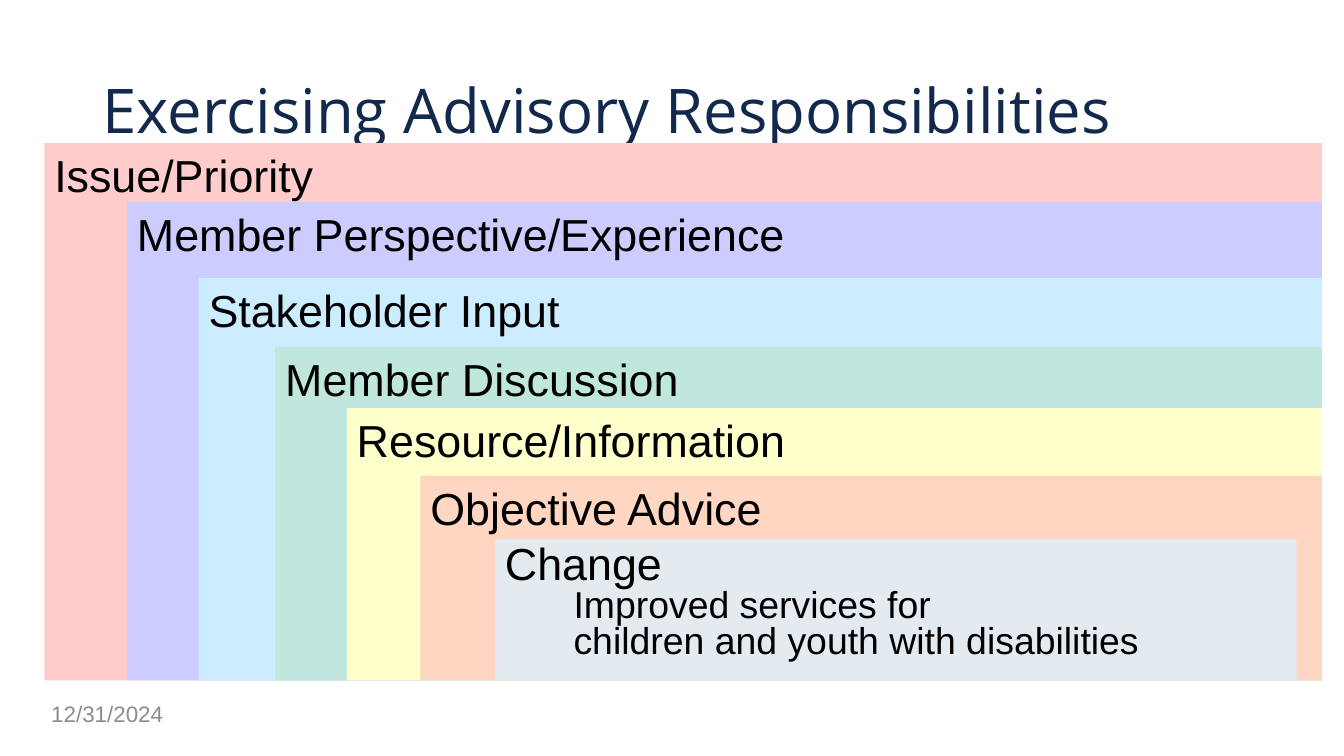
from pptx import Presentation
from pptx import util as u
from pptx.dml import color
from pptx.enum import shapes, text

RIGHT, BASE = 13.11, 6.75
LAYERS = [
    ("Issue/Priority", 0.44, 1.42, "FFCCCC"),
    ("Member Perspective/Experience", 1.26, 2, "CCCCFF"),
    ("Stakeholder Input", 1.97, 2.76, "CCECFF"),
    ("Member Discussion", 2.73, 3.44, "BFE7DD"),
    ("Resource/Information", 3.44, 4.05, "FFFFCC"),
    ("Objective Advice", 4.17, 4.72, "FFD6C1"),
]
GOALS = ["Improved services for", "children and youth with disabilities"]


def tint(fmt, code):
    fmt.rgb = color.RGBColor.from_string(code)


def style(para, size, code="000000", face="Arial"):
    para.alignment = text.PP_ALIGN.LEFT
    for run in para.runs:
        run.font.size = u.Pt(size)
        run.font.name = face
        tint(run.font.color, code)


def label(slide, box, words, size, code, face):
    frame = slide.shapes.add_textbox(*map(u.Inches, box)).text_frame
    frame.word_wrap = True
    frame.vertical_anchor = text.MSO_ANCHOR.MIDDLE
    frame.text = words
    style(frame.paragraphs[0], size, code, face)
    return frame


def panel(group, box, words, code):
    shape = group.shapes.add_shape(shapes.MSO_SHAPE.RECTANGLE, *map(u.Inches, box))
    shape.shadow.inherit = False
    shape.fill.solid()
    tint(shape.fill.fore_color, code)
    shape.line.fill.background()
    frame = shape.text_frame
    frame.word_wrap = False
    frame.vertical_anchor = text.MSO_ANCHOR.TOP
    frame.text = words
    style(frame.paragraphs[0], 32)
    return frame


def outcome(group, box):
    frame = panel(group, box, "Change", "E4EBF0")
    frame.margin_top = u.Inches(0.13)
    for goal in GOALS:
        para = frame.add_paragraph()
        para.text = goal
        para._p.get_or_add_pPr().set("marL", str(u.Inches(0.68)))
        para.space_before = u.Pt(5.3)
        style(para, 26.7)
    for para in frame.paragraphs:
        para.line_spacing = 0.65


def layers(slide):
    group = slide.shapes.add_group_shape()
    for words, left, top, code in LAYERS:
        panel(group, (left, top, RIGHT - left, BASE - top), words, code)
    outcome(group, (4.91, 5.35, 7.95, BASE - 5.35))


def main():
    deck = Presentation()
    deck.slide_width, deck.slide_height = u.Inches(13.33), u.Inches(7.5)
    slide = deck.slides.add_slide(deck.slide_layouts[6])
    title = label(slide, (0.92, 0.4, 11.5, 1.45),
                  "Exercising Advisory Responsibilities", 44, "12284C", "Open Sans")
    title.paragraphs[0].line_spacing = 0.9
    layers(slide)
    label(slide, (0.41, 6.88, 3.11, 0.4), "12/31/2024", 16, "8C8C8C", "Arial")
    deck.save("out.pptx")


if __name__ == "__main__":
    main()
